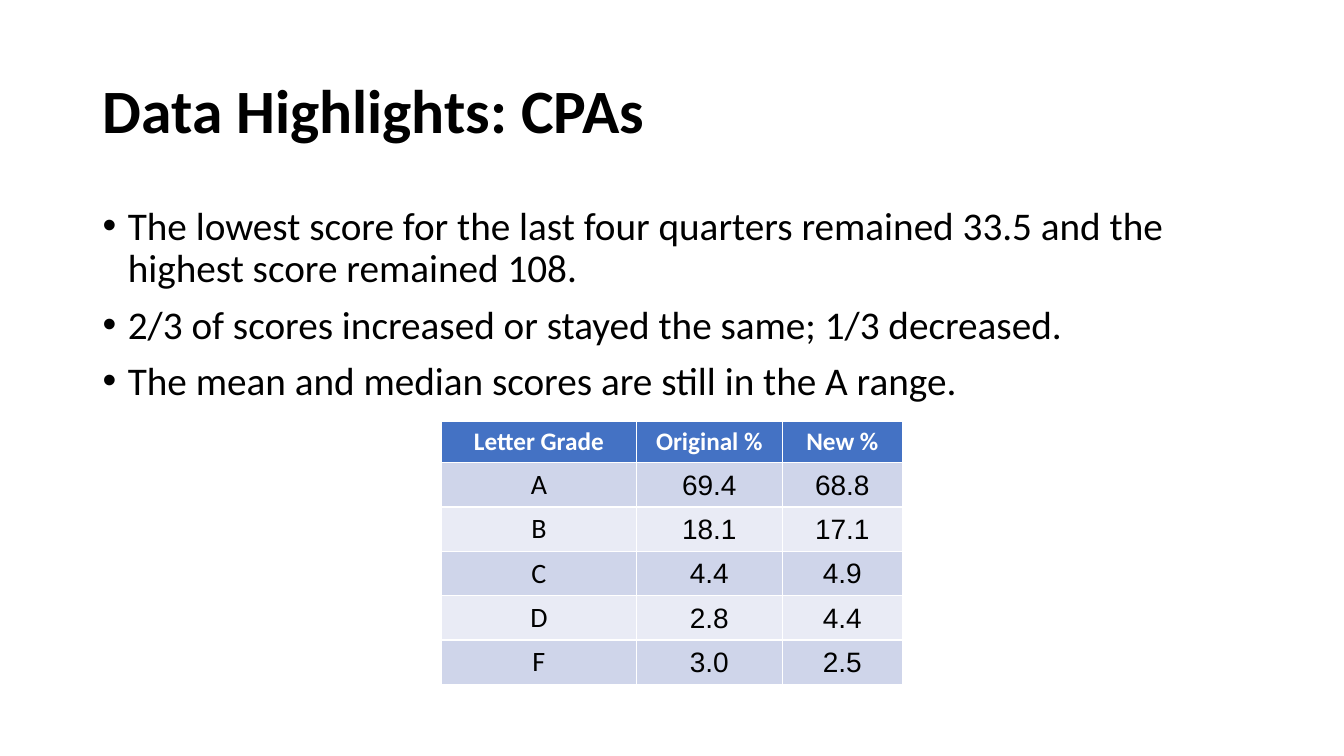
from pptx import Presentation
from pptx.dml.color import RGBColor
from pptx.enum.text import MSO_ANCHOR, PP_ALIGN
from pptx.oxml import parse_xml
from pptx.oxml.ns import nsdecls
from pptx.util import Inches, Pt

MIDDLE = MSO_ANCHOR.MIDDLE
CENTER = PP_ALIGN.CENTER
COLORS = {"text": "000000", "header": "4472C4", "header text": "FFFFFF",
          "odd row": "CFD5EA", "even row": "E9EBF5"}
LEFT, WIDTH = Inches(0.92), Inches(11.5)


def set_font(paragraph, size, color="text", face="Calibri", bold=False):
    font = paragraph.font
    font.name, font.size, font.bold = face, Pt(size), bold
    font.color.rgb = RGBColor.from_string(COLORS[color])


prs = Presentation()
prs.slide_width, prs.slide_height = Inches(13.33), Inches(7.5)
slide = prs.slides.add_slide(prs.slide_layouts[6])

# Title
title = slide.shapes.add_textbox(LEFT, Inches(0.4), WIDTH, Inches(1.45)).text_frame
title.word_wrap = True
title.vertical_anchor = MIDDLE
heading = title.paragraphs[0]
heading.text = "Data Highlights: CPAs"
heading.line_spacing = 0.9
set_font(heading, 44, bold=True)

# Highlights
highlights = [
    "The lowest score for the last four quarters remained 33.5 and the highest score remained 108.",
    "2/3 of scores increased or stayed the same; 1/3 decreased.",
    "The mean and median scores are still in the A range.",
]
body = slide.shapes.add_textbox(LEFT, Inches(2), WIDTH, Inches(4.76)).text_frame
body.word_wrap = True
for i, highlight in enumerate(highlights):
    point = body.add_paragraph() if i else body.paragraphs[0]
    point.text = highlight
    point.line_spacing = 0.9
    point.space_before = Pt(10 if i else 0)
    props = point._p.get_or_add_pPr()
    props.set("marL", str(Inches(0.25)))
    props.set("indent", str(-Inches(0.25)))
    props.append(parse_xml(f'<a:buFont {nsdecls("a")} typeface="Arial"/>'))
    props.append(parse_xml(f'<a:buChar {nsdecls("a")} char="•"/>'))
    set_font(point, 28)

# Grade distribution
grades = [
    ("Letter Grade", "Original %", "New %"),
    ("A", "69.4", "68.8"),
    ("B", "18.1", "17.1"),
    ("C", "4.4", "4.9"),
    ("D", "2.8", "4.4"),
    ("F", "3.0", "2.5"),
]
column_widths = [1.93, 1.45, 1.19]
header_height, row_height = 0.41, 0.44
table = slide.shapes.add_table(
    len(grades), len(column_widths), Inches(4.38), Inches(4.18),
    Inches(sum(column_widths)),
    Inches(header_height + row_height * (len(grades) - 1))).table
for column, width in zip(table.columns, column_widths):
    column.width = Inches(width)

for r, grade in enumerate(grades):
    table.rows[r].height = Inches(row_height if r else header_height)
    fill = "header" if r == 0 else "odd row" if r % 2 else "even row"
    for c, value in enumerate(grade):
        cell = table.cell(r, c)
        cell.fill.solid()
        cell.fill.fore_color.rgb = RGBColor.from_string(COLORS[fill])
        entry = cell.text_frame.paragraphs[0]
        entry.text = value
        entry.alignment = CENTER
        if r == 0:
            set_font(entry, 18, "header text", bold=True)
        elif c == 0:
            set_font(entry, 20)
        else:
            set_font(entry, 20, face="Arial")
            cell.vertical_anchor = MIDDLE
            cell.margin_left = cell.margin_right = cell.margin_top = Inches(0.01)
            cell.margin_bottom = 0

prs.save("out.pptx")
